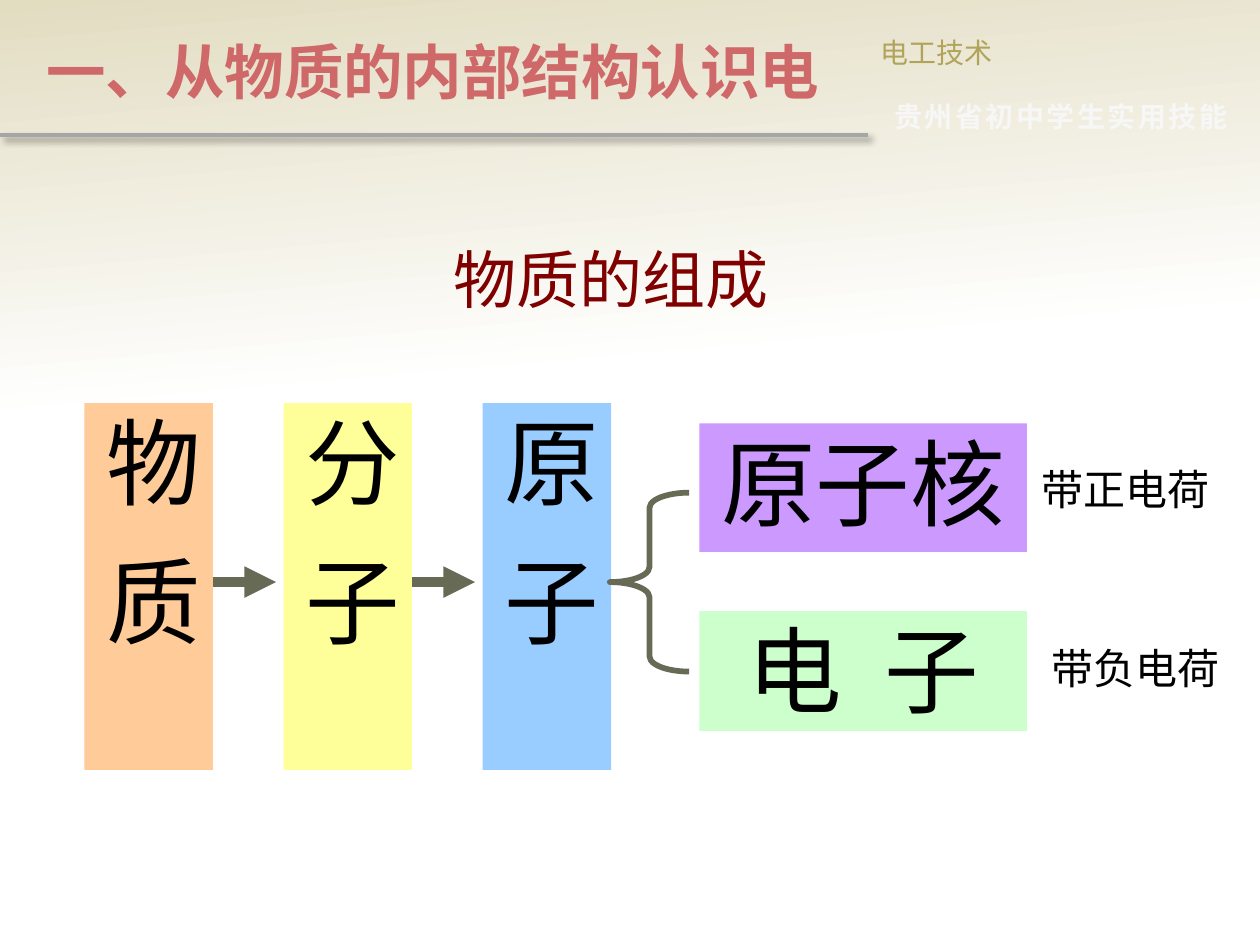
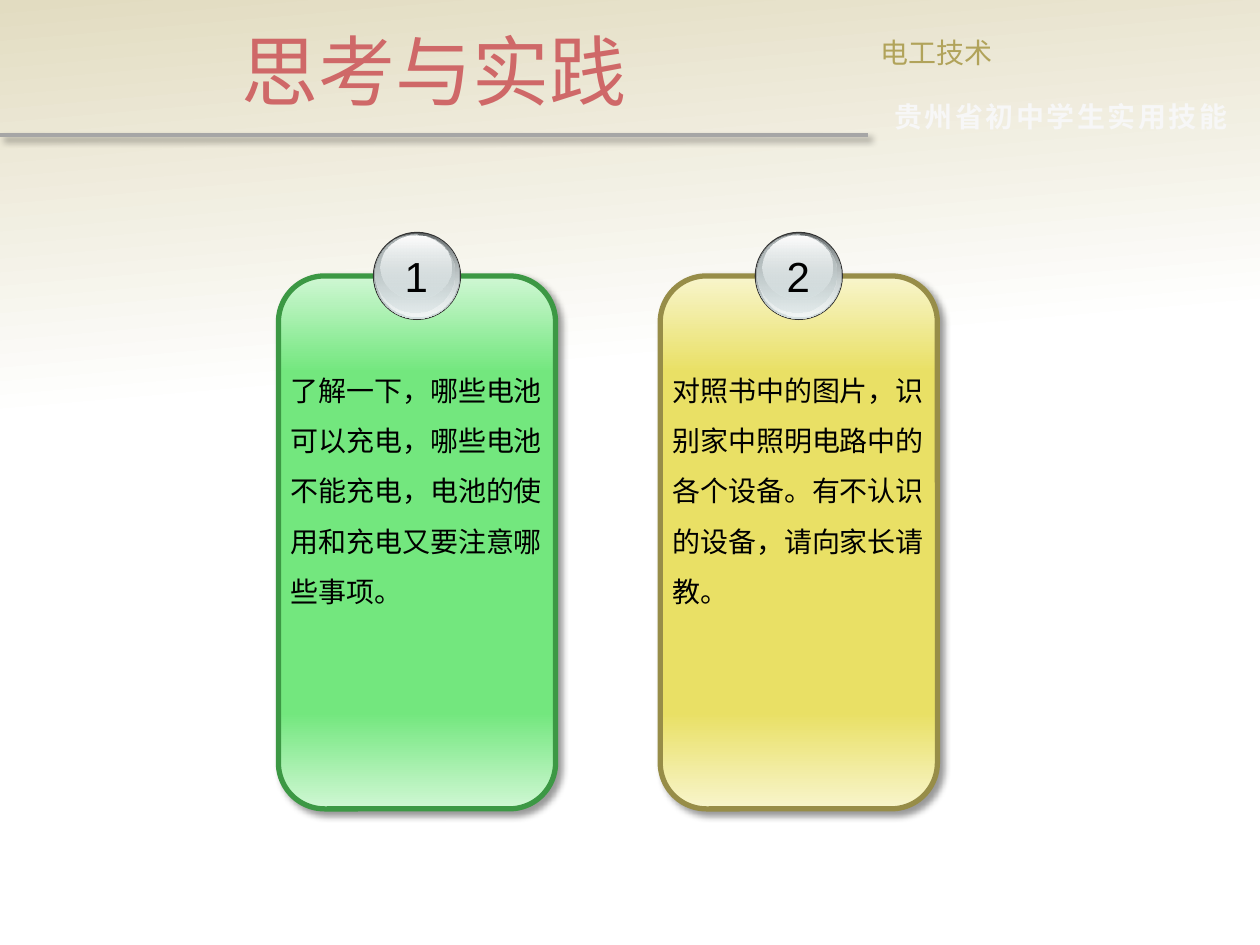
from dataclasses import dataclass

from lxml import etree
from pptx import Presentation
from pptx.dml.color import RGBColor
from pptx.enum.shapes import MSO_CONNECTOR, MSO_SHAPE
from pptx.enum.text import MSO_ANCHOR, MSO_AUTO_SIZE, PP_ALIGN
from pptx.oxml.ns import qn
from pptx.util import Inches, Pt

RECT, ROUND, OVAL, BRACE = (MSO_SHAPE.RECTANGLE, MSO_SHAPE.ROUNDED_RECTANGLE,
                            MSO_SHAPE.OVAL, MSO_SHAPE.LEFT_BRACE)
STRAIGHT = MSO_CONNECTOR.STRAIGHT
LEFT, CENTER, JUSTIFY = PP_ALIGN.LEFT, PP_ALIGN.CENTER, PP_ALIGN.JUSTIFY
TOP, MIDDLE = MSO_ANCHOR.TOP, MSO_ANCHOR.MIDDLE
GROW = MSO_AUTO_SIZE.SHAPE_TO_FIT_TEXT


@dataclass(frozen=True)
class Theme:
    # Fonts
    cjk: str = "Noto Sans CJK SC"
    heading: str = "Calibri"
    block: str = "Times New Roman"
    number: str = "Arial"
    # Sizes
    small: int = 16
    label: int = 24
    title: int = 34
    subtitle: int = 36
    big_title: int = 44
    huge: int = 54
    # Colours
    ink: str = "000000"
    title_ink: str = "CF6868"
    course_ink: str = "B1A35A"
    program_ink: str = "F7F7F7"
    subtitle_ink: str = "800000"
    rule: str = "A6A6A6"
    arrow: str = "676A55"
    ball_rim: str = "333333"
    background: tuple = ((0, "E2DCC1"), (40, "FFFFFF"), (100, "FFFFFF"))


THEME = Theme()


def add_xml(parent, tag, **attributes):
    """Append a drawing element with the given attributes."""
    child = etree.SubElement(parent, qn(tag))
    for name, value in attributes.items():
        child.set(name, str(value))
    return child


def add_color(parent, color, opacity=100):
    clr = add_xml(parent, "a:srgbClr", val=color)
    if opacity < 100:
        add_xml(clr, "a:alpha", val=opacity * 1000)


def set_gradient(fill, properties, stops, angle):
    """Replace the fill by a gradient of (percent, colour[, opacity]) stops."""
    fill.solid()
    solid = properties.find(qn("a:solidFill"))
    grad = etree.Element(qn("a:gradFill"), rotWithShape="1")
    stop_list = add_xml(grad, "a:gsLst")
    for position, *color in stops:
        add_color(add_xml(stop_list, "a:gs", pos=position * 1000), *color)
    add_xml(grad, "a:lin", ang=angle * 60000, scaled=0)
    properties.replace(solid, grad)


def set_shadow(properties):
    """Cast a soft shadow to the lower right."""
    effects = properties.find(qn("a:effectLst"))
    shadow = add_xml(effects, "a:outerShdw", blurRad=Pt(4), dist=Pt(3),
                     dir=45 * 60000, algn="tl", rotWithShape=0)
    add_color(shadow, "000000", 40)


class Deck:
    def __init__(self, theme):
        self.theme = theme
        self.prs = Presentation()
        self.prs.slide_width, self.prs.slide_height = Inches(10), Inches(7.5)
        self.shapes = None

    def new_slide(self):
        """Start a slide with the shared background, rule and header."""
        t = self.theme
        s = self.prs.slides.add_slide(self.prs.slide_layouts[6])
        self.shapes = s.shapes
        fill = s.background.fill
        fill.solid()
        set_gradient(fill, s.element.find(".//" + qn("p:bgPr")), t.background, 85)
        self.line(0, 6.89, 1.07, t.rule, 2.25, shadow=True)
        self.text((6.89, 0.23, 3.11, 0.37), "电工技术", t.small, t.course_ink,
                  align=JUSTIFY, grow=True)
        self.text((7, 0.74, 2.95, 0.4), "贵州省初中学生实用技能", t.small,
                  t.program_ink, bold=True, spacing=1.5)

    def set_text(self, sp, text, size, color, font=None, align=LEFT, anchor=TOP,
                 bold=False, inset=0.05, wrap=True, spacing=0, line_spacing=None):
        """Put one paragraph of styled text in a shape."""
        tf = sp.text_frame
        tf.word_wrap = wrap
        tf.vertical_anchor = anchor
        tf.margin_top = tf.margin_bottom = Inches(inset)
        p = tf.paragraphs[0]
        p.text = text
        p.alignment = align
        if line_spacing:
            p.line_spacing = line_spacing
        p.font.size, p.font.bold = Pt(size), bold
        p.font.color.rgb = RGBColor.from_string(color)
        p.font.name = font or self.theme.cjk
        run_style = p._p.pPr.find(qn("a:defRPr"))
        add_xml(run_style, "a:ea", typeface=self.theme.cjk)
        if spacing:
            run_style.set("spc", str(int(spacing * 100)))

    def text(self, box, text, size, color, grow=False, **style):
        sp = self.shapes.add_textbox(*map(Inches, box))
        self.set_text(sp, text, size, color, **style)
        if grow:
            sp.text_frame.auto_size = GROW

    def shape(self, kind, box, fill=None, line=None, width=1, shadow=False):
        """Draw a preset shape; fill is a colour or a list of gradient stops."""
        sp = self.shapes.add_shape(kind, *map(Inches, box))
        properties = sp._element.spPr
        if fill is None:
            sp.fill.background()
        elif isinstance(fill, str):
            sp.fill.solid()
            sp.fill.fore_color.rgb = RGBColor.from_string(fill)
        else:
            set_gradient(sp.fill, properties, fill, 90)
        if line:
            sp.line.color.rgb = RGBColor.from_string(line)
            sp.line.width = Pt(width)
        else:
            sp.line.fill.background()
        sp.shadow.inherit = False
        if shadow:
            set_shadow(properties)
        return sp

    def block(self, box, text, fill, vertical=False):
        """Draw a coloured block with one huge word."""
        t = self.theme
        sp = self.shape(RECT, box, fill)
        self.set_text(sp, text, t.huge, t.ink, t.block, CENTER,
                      inset=0.05 if vertical else 0.01)
        if vertical:
            sp.text_frame._txBody.bodyPr.set("vert", "eaVert")

    def line(self, x1, x2, y, color, width, arrow=False, shadow=False):
        """Draw a horizontal line."""
        cx = self.shapes.add_connector(STRAIGHT, Inches(x1), Inches(y),
                                       Inches(x2), Inches(y))
        cx.line.color.rgb = RGBColor.from_string(color)
        cx.line.width = Pt(width)
        properties = cx._element.spPr
        if arrow:
            add_xml(properties.find(qn("a:ln")), "a:tailEnd", type="triangle")
        add_xml(properties, "a:effectLst")
        if shadow:
            set_shadow(properties)

    def card(self, x, number, text, light, main_color, border):
        """Draw a grouped rounded card with a numbered glass ball on top."""
        t = self.theme
        page_shapes = self.shapes
        self.shapes = page_shapes.add_group_shape().shapes
        stops = [(0, light), (18, main_color), (82, main_color), (100, light)]
        self.shape(ROUND, (x, 2.19, 2.2, 4.23), stops, border, 3, shadow=True)
        self.text((x, 2.78, 2.2, 2.12), text, t.small, t.ink, grow=True,
                  line_spacing=1.5)
        for dx, y, w, h, fill in BALL_LAYERS:
            self.shape(OVAL, (x + dx, y, w, h), fill)
        self.text((x + 0.9, 1.94, 0.39, 0.5), number, t.label, t.ink, grow=True,
                  font=t.number, align=CENTER, wrap=False)
        self.shapes = page_shapes


# Glass ball from back to front: offset in card, top, width, height, fill
BALL_LAYERS = [
    (0.75, 1.84, 0.7, 0.7, THEME.ball_rim),
    (0.76, 1.85, 0.68, 0.68, [(0, "636869"), (100, "D6E1E2")]),
    (0.77, 1.85, 0.66, 0.66, [(0, "D6E1E2", 0), (100, "F1F5F5")]),
    (0.77, 1.86, 0.63, 0.62, [(0, "AAB2B3"), (100, "D6E1E2", 48)]),
    (0.81, 1.87, 0.56, 0.5, [(0, "FFFFFF"), (100, "D6E1E2", 38)]),
]


def matter_slide(deck):
    t = deck.theme
    deck.new_slide()
    deck.text((0.27, 0.05, 6.62, 1.02), "一、从物质的内部结构认识电", t.title,
              t.title_ink, bold=True, anchor=MIDDLE)
    deck.text((3.5, 1.86, 3.07, 0.7), "物质的组成", t.subtitle, t.subtitle_ink,
              font=t.heading, grow=True)

    # Matter, molecule, atom
    left, pitch, width, axis = 0.67, 1.58, 1.02, 4.62
    levels = [("物  质", "FFCC99"), ("分  子", "FFFF99"), ("原  子", "99CCFF")]
    for i, (name, fill) in enumerate(levels):
        x = left + i * pitch
        deck.block((x, 3.2, width, 2.91), name, fill, vertical=True)
        if i < len(levels) - 1:
            deck.line(x + width, x + width + 0.5, axis, t.arrow, 6, arrow=True)

    # Parts of the atom and their charges
    brace = deck.shape(BRACE, (4.84, 3.91, 0.63, 1.42), line=t.arrow, width=3.25)
    brace.adjustments[0] = 0.19
    parts = [("原子核", "CC99FF", 3.36, 1.02, "带正电荷", 8.15, 3.67),
             ("电  子", "CCFFCC", 4.85, 0.95, "带负电荷", 8.23, 5.09)]
    for name, fill, y, height, charge, charge_x, charge_y in parts:
        deck.block((5.55, y, 2.6, height), name, fill)
        deck.text((charge_x, charge_y, 1.57, 0.47), charge, t.label, t.ink,
                  align=CENTER, inset=0.01)


def practice_slide(deck):
    t = deck.theme
    deck.new_slide()
    deck.text((0, 0.04, 6.89, 1.02), "思考与实践", t.big_title, t.title_ink,
              align=CENTER, anchor=MIDDLE)

    # Task cards
    tasks = [
        ("了解一下，哪些电池可以充电，哪些电池不能充电，电池的使用和充电又要注意哪些事项。",
         "D0F7D4", "73E77E", "3C9844"),
        ("对照书中的图片，识别家中照明电路中的各个设备。有不认识的设备，请向家长请教。",
         "F8F5CC", "E9E065", "978D48"),
    ]
    for i, (text, light, main_color, border) in enumerate(tasks):
        deck.card(2.21 + i * 3.03, str(i + 1), text, light, main_color, border)


def main():
    deck = Deck(THEME)
    matter_slide(deck)
    practice_slide(deck)
    deck.prs.save("out.pptx")


if __name__ == "__main__":
    main()
